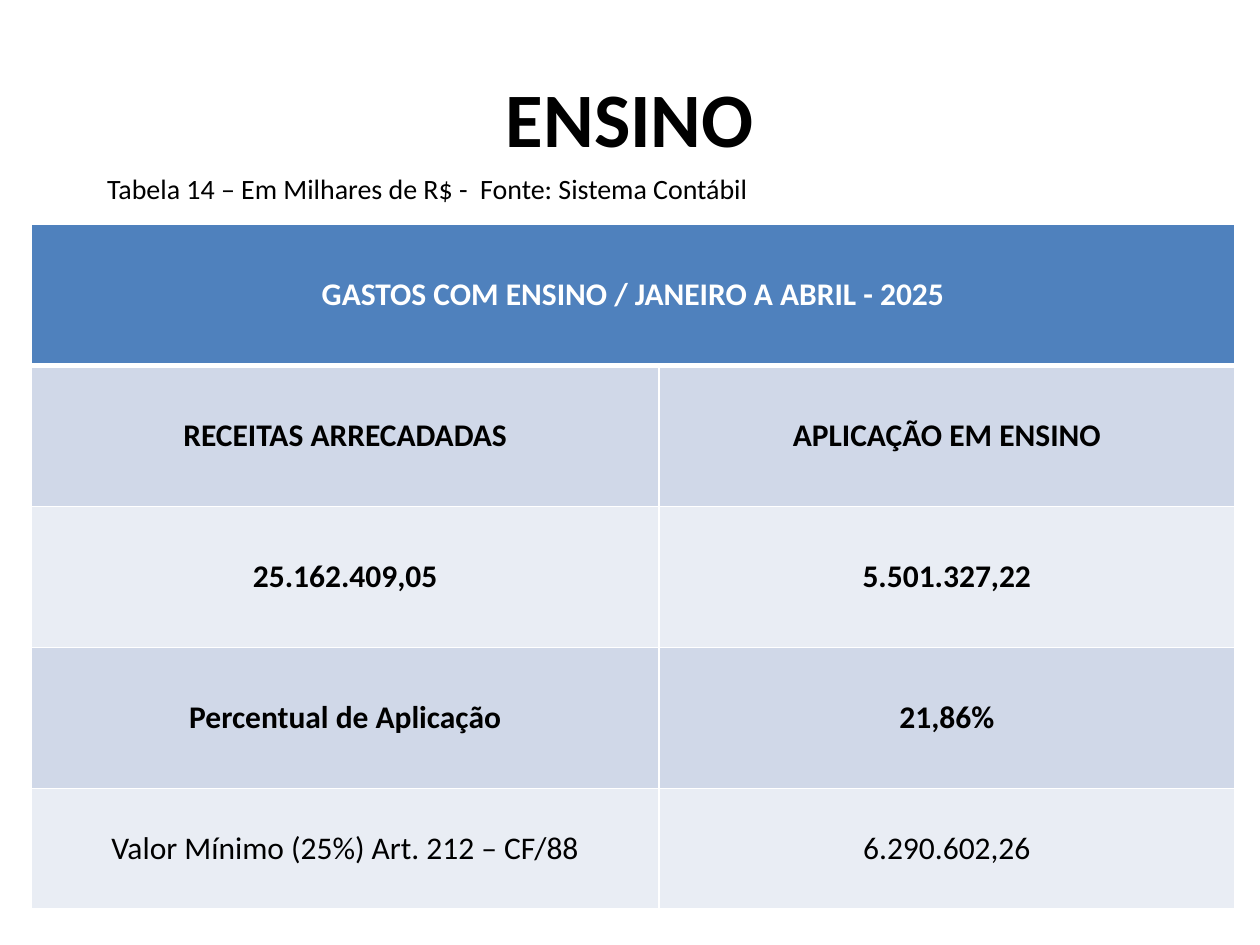
from dataclasses import dataclass

from lxml import etree
from pptx import Presentation
from pptx.dml.color import RGBColor
from pptx.enum import text
from pptx.oxml import ns
from pptx.util import Inches, Pt


@dataclass(frozen=True)
class Theme:
    font: str = "Calibri"
    ink: str = "000000"
    paper: str = "FFFFFF"
    header: str = "4F81BD"
    bands: tuple = ("D0D8E8", "E9EDF4")
    title_size: int = 44
    caption_size: int = 16
    table_size: int = 18
    thin_rule: float = 1
    header_rule: float = 3


THEME = Theme()
HEADING = "GASTOS COM ENSINO / JANEIRO A ABRIL - 2025"
SPENDING = [
    ("RECEITAS ARRECADADAS", "APLICAÇÃO EM ENSINO"),
    ("25.162.409,05", "5.501.327,22"),
    ("Percentual de Aplicação", "21,86%"),
    ("Valor Mínimo (25%) Art. 212 – CF/88", "6.290.602,26"),
]
COLUMN_WIDTHS = (4.98, 4.57)
ROW_HEIGHTS = (1.12, 1.12, 1.12, 1.12, 0.95)


def place(shape, box):
    shape.left, shape.top, shape.width, shape.height = map(Inches, box)


def write(frame, wording, size, color, bold=False, align=text.PP_ALIGN.CENTER):
    frame.text = wording
    paragraph = frame.paragraphs[0]
    paragraph.alignment = align
    font = paragraph.runs[0].font
    font.name, font.size, font.bold = THEME.font, Pt(size), bold
    font.color.rgb = RGBColor.from_string(color)


def add_title(slide, box):
    title = slide.shapes.title
    place(title, box)
    write(title.text_frame, "ENSINO", THEME.title_size, THEME.ink, bold=True)
    title.text_frame.vertical_anchor = text.MSO_ANCHOR.MIDDLE


def add_caption(slide, box):
    caption = slide.placeholders[1]
    place(caption, box)
    write(caption.text_frame,
          "Tabela 14 – Em Milhares de R$ -  Fonte: Sistema Contábil",
          THEME.caption_size, THEME.ink, align=text.PP_ALIGN.LEFT)
    properties = caption.text_frame.paragraphs[0]._p.get_or_add_pPr()
    properties.set("marL", str(Inches(0.38)))
    properties.set("indent", str(-Inches(0.38)))
    etree.SubElement(properties, ns.qn("a:buNone"))


def add_borders(cell, bottom):
    properties = cell._tc.get_or_add_tcPr()
    thin = THEME.thin_rule
    for side, width in (("L", thin), ("R", thin), ("T", thin), ("B", bottom)):
        line = etree.SubElement(properties, ns.qn(f"a:ln{side}"), w=str(Pt(width)))
        fill = etree.SubElement(line, ns.qn("a:solidFill"))
        etree.SubElement(fill, ns.qn("a:srgbClr"), val=THEME.paper)


def fill_cell(cell, wording, fill, color, bold, bottom=THEME.thin_rule):
    write(cell.text_frame, wording, THEME.table_size, color, bold)
    cell.vertical_anchor = text.MSO_ANCHOR.MIDDLE
    add_borders(cell, bottom)
    cell.fill.solid()
    cell.fill.fore_color.rgb = RGBColor.from_string(fill)


def add_spending_table(slide, left, top):
    table = slide.shapes.add_table(
        len(ROW_HEIGHTS), len(COLUMN_WIDTHS), Inches(left), Inches(top),
        Inches(sum(COLUMN_WIDTHS)), Inches(sum(ROW_HEIGHTS))).table
    for column, width in zip(table.columns, COLUMN_WIDTHS):
        column.width = Inches(width)
    for row, height in zip(table.rows, ROW_HEIGHTS):
        row.height = Inches(height)

    heading = table.cell(0, 0)
    heading.merge(table.cell(0, 1))
    fill_cell(heading, HEADING, THEME.header, THEME.paper, True, THEME.header_rule)
    for r, entries in enumerate(SPENDING):
        is_minimum = r == len(SPENDING) - 1
        for c, entry in enumerate(entries):
            fill_cell(table.cell(r + 1, c), entry, THEME.bands[r % 2],
                      THEME.ink, bold=not is_minimum)


def main():
    deck = Presentation()
    deck.slide_width, deck.slide_height = Inches(10), Inches(7.5)
    slide = deck.slides.add_slide(deck.slide_layouts[1])
    add_title(slide, (0.5, 0.3, 9, 1.25))
    add_caption(slide, (0.75, 1.31, 9, 0.55))
    add_spending_table(slide, 0.25, 1.78)
    deck.save("out.pptx")


if __name__ == "__main__":
    main()
